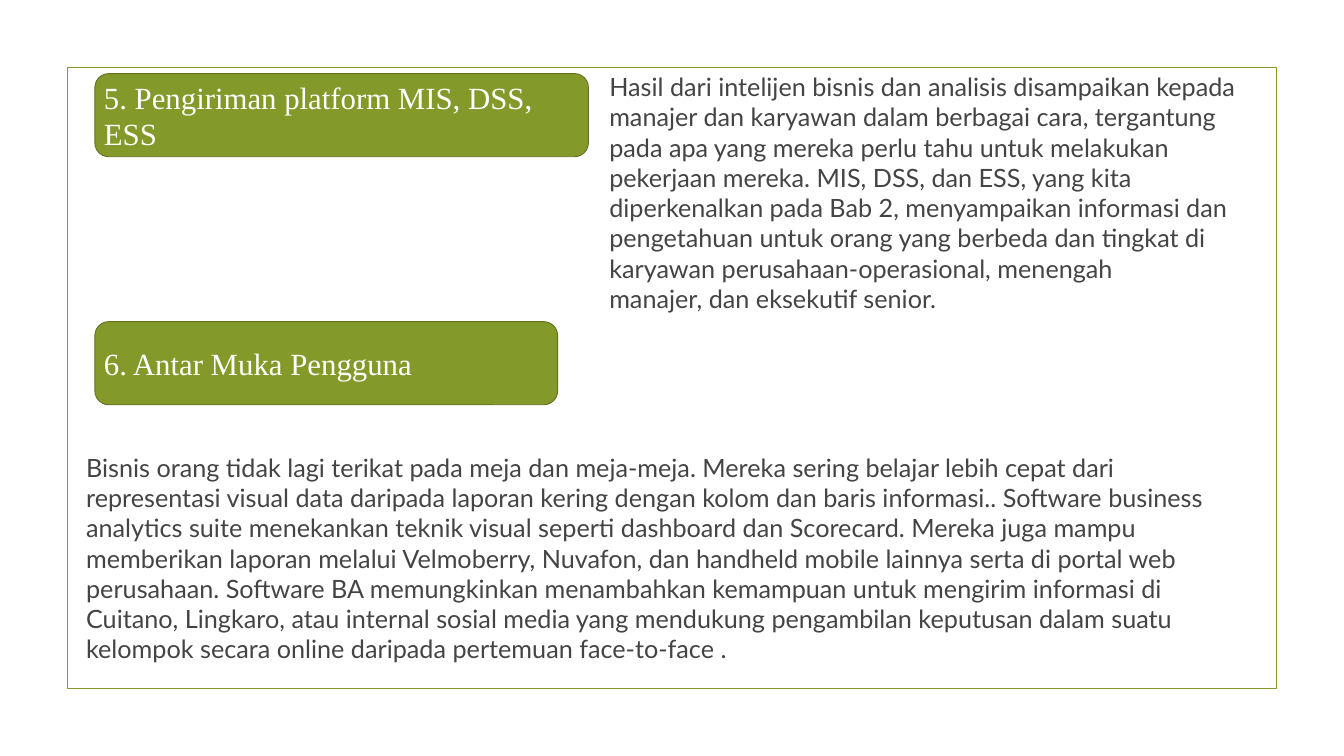
from dataclasses import dataclass

from pptx import Presentation
from pptx.dml.color import RGBColor
from pptx.enum.shapes import MSO_SHAPE
from pptx.enum.text import MSO_ANCHOR, MSO_AUTO_SIZE, PP_ALIGN
from pptx.slide import Slide
from pptx.text.text import TextFrame
from pptx.util import Cm, Pt


@dataclass(frozen=True)
class Theme:
    green: RGBColor = RGBColor(0x83, 0x99, 0x2A)
    dark_green: RGBColor = RGBColor(0x61, 0x71, 0x1F)
    white: RGBColor = RGBColor(0xFF, 0xFF, 0xFF)
    grey: RGBColor = RGBColor(0x44, 0x44, 0x44)
    heading_font: str = "Times New Roman"
    body_font: str = "Lato"
    heading_size: Pt = Pt(44)
    body_size: Pt = Pt(36)
    line_width: Pt = Pt(1.25)


@dataclass(frozen=True)
class Heading:
    text: str
    top: float
    width: float


@dataclass(frozen=True)
class Explanation:
    text: str
    left: float
    top: float
    width: float
    height: float


THEME = Theme()
HEADING_LEFT = 4.78
HEADING_HEIGHT = 4.19

HEADINGS = [
    Heading("5. Pengiriman platform MIS, DSS, ESS", 3.71, 24.87),
    Heading("6. Antar Muka Pengguna", 16.21, 23.32),
]

EXPLANATIONS = [
    Explanation(
        "Hasil dari intelijen bisnis dan analisis disampaikan kepada manajer dan karyawan "
        "dalam berbagai cara, tergantung pada apa yang mereka perlu tahu untuk melakukan "
        "pekerjaan mereka. MIS, DSS, dan ESS, yang kita diperkenalkan pada Bab 2, "
        "menyampaikan informasi dan pengetahuan untuk orang yang berbeda dan tingkat di "
        "karyawan perusahaan-operasional, menengah\nmanajer, dan eksekutif senior.",
        30.45, 3.48, 33.86, 12.57,
    ),
    Explanation(
        "Bisnis orang tidak lagi terikat pada meja dan meja-meja. Mereka sering belajar "
        "lebih cepat dari representasi visual data daripada laporan kering dengan kolom dan "
        "baris informasi.. Software business analytics suite menekankan teknik visual "
        "seperti dashboard dan Scorecard. Mereka juga mampu memberikan laporan melalui "
        "Velmoberry, Nuvafon, dan handheld mobile lainnya serta di portal web perusahaan. "
        "Software BA memungkinkan menambahkan kemampuan untuk mengirim informasi di "
        "Cuitano, Lingkaro, atau internal sosial media yang mendukung pengambilan keputusan "
        "dalam suatu kelompok secara online daripada pertemuan face-to-face .",
        4.09, 22.66, 58.04, 11.02,
    ),
]


def write(frame: TextFrame, text: str, font: str, size: Pt, color: RGBColor) -> None:
    frame.word_wrap = True
    paragraph = frame.paragraphs[0]
    paragraph.text = text
    paragraph.alignment = PP_ALIGN.LEFT
    paragraph.font.name = font
    paragraph.font.size = size
    paragraph.font.color.rgb = color


def draw_frame(slide: Slide) -> None:
    border = slide.shapes.add_shape(
        MSO_SHAPE.RECTANGLE, Cm(3.38), Cm(3.38), Cm(60.93), Cm(31.32)
    )
    border.shadow.inherit = False
    border.fill.background()
    border.line.color.rgb = THEME.green
    border.line.width = THEME.line_width


def draw_heading(slide: Slide, heading: Heading) -> None:
    banner = slide.shapes.add_shape(
        MSO_SHAPE.ROUNDED_RECTANGLE,
        Cm(HEADING_LEFT), Cm(heading.top), Cm(heading.width), Cm(HEADING_HEIGHT),
    )
    banner.shadow.inherit = False
    banner.fill.solid()
    banner.fill.fore_color.rgb = THEME.green
    banner.line.color.rgb = THEME.dark_green
    banner.line.width = THEME.line_width
    banner.text_frame.vertical_anchor = MSO_ANCHOR.MIDDLE
    write(banner.text_frame, heading.text, THEME.heading_font, THEME.heading_size, THEME.white)


def draw_explanation(slide: Slide, explanation: Explanation) -> None:
    passage = slide.shapes.add_textbox(
        Cm(explanation.left), Cm(explanation.top),
        Cm(explanation.width), Cm(explanation.height),
    )
    write(passage.text_frame, explanation.text, THEME.body_font, THEME.body_size, THEME.grey)
    passage.text_frame.auto_size = MSO_AUTO_SIZE.SHAPE_TO_FIT_TEXT


def main() -> None:
    presentation = Presentation()
    presentation.slide_width = Cm(67.72)
    presentation.slide_height = Cm(38.1)
    slide = presentation.slides.add_slide(presentation.slide_layouts.get_by_name("Blank"))
    draw_frame(slide)
    for heading in HEADINGS:
        draw_heading(slide, heading)
    for explanation in EXPLANATIONS:
        draw_explanation(slide, explanation)
    presentation.save("out.pptx")


if __name__ == "__main__":
    main()
